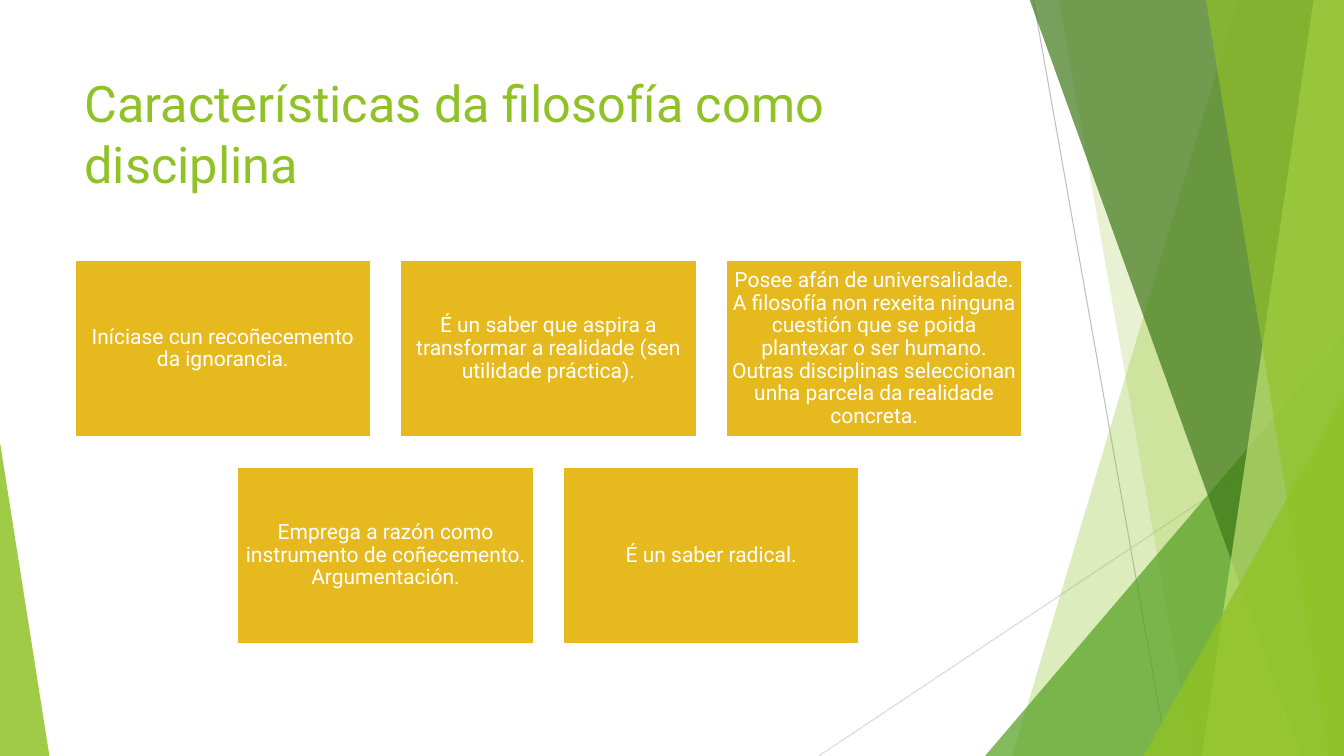
from dataclasses import dataclass

from lxml.etree import SubElement
from pptx import Presentation
from pptx.dml.color import RGBColor
from pptx.enum.shapes import MSO_CONNECTOR, MSO_SHAPE
from pptx.enum.text import MSO_ANCHOR, PP_ALIGN
from pptx.oxml.ns import qn
from pptx.shapes.autoshape import Shape
from pptx.slide import Slide
from pptx.util import Inches, Pt

WHITE = RGBColor(0xFF, 0xFF, 0xFF)
LIME = RGBColor(0x90, 0xC2, 0x26)
LEAF = RGBColor(0x54, 0xA0, 0x21)
FOREST = RGBColor(0x3F, 0x78, 0x19)
PALE_LIME = RGBColor(0xC0, 0xE4, 0x74)
GOLD = RGBColor(0xE6, 0xB9, 0x1E)
GRAY = RGBColor(0xBF, 0xBF, 0xBF)
LIGHT_GRAY = RGBColor(0xD9, 0xD9, 0xD9)

WIDTH, HEIGHT = 13.33, 7.5
FACET_TOP = -0.01
CARD_WIDTH, CARD_HEIGHT, GAP = 2.94, 1.76, 0.29
GRID_CENTER, GRID_TOP = 5.44, 2.58


@dataclass
class Ray:
    start: tuple[float, float]
    end: tuple[float, float]
    color: RGBColor


@dataclass
class Facet:
    """A full-height band whose slanted left edge runs from top_x to bottom_x."""
    top_x: float
    bottom_x: float
    color: RGBColor
    opacity: int


@dataclass
class Wedge:
    """A right triangle standing on the bottom edge of the page."""
    left: float
    width: float
    height: float
    apex: float
    color: RGBColor
    opacity: int


RAYS = [
    Ray((10.25, 0), (11.58, HEIGHT), GRAY),
    Ray((WIDTH, 4.03), (8.12, HEIGHT), LIGHT_GRAY),
]
DECORATION: list[Facet | Wedge] = [
    Facet(12.28, 10.04, LIME, 30),
    Facet(10.5, 11.83, LIME, 20),
    Wedge(9.77, 3.56, 4.17, 1, LEAF, 72),
    Facet(10.21, 12.91, FOREST, 70),
    Facet(13.03, 11.92, PALE_LIME, 70),
    Facet(11.96, 13.18, LIME, 65),
    Wedge(11.34, 1.99, 3.57, 1, LIME, 80),
    Wedge(0, 0.49, 3.11, 0, LIME, 85),
]
TITLE = "Características da filosofía como disciplina"
CARD_ROWS = [
    [
        "Iníciase cun recoñecemento da ignorancia.",
        "É un saber que aspira a transformar a realidade (sen utilidade práctica).",
        "Posee afán de universalidade. A filosofía non rexeita ninguna cuestión que "
        "se poida plantexar o ser humano. Outras disciplinas seleccionan unha "
        "parcela da realidade concreta.",
    ],
    [
        "Emprega a razón como instrumento de coñecemento. Argumentación.",
        "É un saber radical.",
    ],
]
CARD_FRAME = {
    "word_wrap": True,
    "vertical_anchor": MSO_ANCHOR.MIDDLE,
    "margin_left": Inches(0.06),
    "margin_right": Inches(0.06),
    "margin_top": Inches(0.06),
    "margin_bottom": Inches(0.06),
}
CARD_PARA = {"alignment": PP_ALIGN.CENTER, "line_spacing": 0.9}
CARD_FONT = {"name": "Roboto", "size": Pt(15)}
TITLE_FRAME = {"word_wrap": True, "vertical_anchor": MSO_ANCHOR.TOP}
TITLE_PARA = {"alignment": PP_ALIGN.LEFT}
TITLE_FONT = {"name": "Roboto", "size": Pt(36)}


def apply_format(target: object, values: dict) -> None:
    for name, value in values.items():
        setattr(target, name, value)


def write_text(box: Shape, text: str, frame_format: dict, para_format: dict,
               font_format: dict, color: RGBColor) -> None:
    apply_format(box.text_frame, frame_format)
    para = box.text_frame.paragraphs[0]
    apply_format(para, para_format)
    span = para.add_run()
    span.text = text
    apply_format(span.font, font_format)
    span.font.color.rgb = color


def paint(shape: Shape, color: RGBColor, opacity: int) -> None:
    shape.shadow.inherit = False
    shape.line.fill.background()
    shape.fill.solid()
    shape.fill.fore_color.rgb = color
    color_element = shape.fill._xPr.find(qn("a:solidFill"))[0]
    SubElement(color_element, qn("a:alpha")).set("val", str(opacity * 1000))


def draw_ray(page: Slide, ray: Ray) -> None:
    ends = [Inches(value) for value in (*ray.start, *ray.end)]
    line = page.shapes.add_connector(MSO_CONNECTOR.STRAIGHT, *ends)
    line.line.color.rgb = ray.color
    line.line.width = Pt(0.75)
    SubElement(line._element.spPr, qn("a:effectLst"))


def draw_facet(page: Slide, facet: Facet) -> None:
    corners = [(WIDTH, FACET_TOP), (WIDTH, HEIGHT), (facet.bottom_x, HEIGHT)]
    outline = page.shapes.build_freeform(Inches(facet.top_x), Inches(FACET_TOP))
    outline.add_line_segments([(Inches(x), Inches(y)) for x, y in corners], close=True)
    paint(outline.convert_to_shape(), facet.color, facet.opacity)


def draw_wedge(page: Slide, wedge: Wedge) -> None:
    triangle = page.shapes.add_shape(
        MSO_SHAPE.ISOSCELES_TRIANGLE, Inches(wedge.left), Inches(HEIGHT - wedge.height),
        Inches(wedge.width), Inches(wedge.height))
    triangle.adjustments[0] = wedge.apex
    paint(triangle, wedge.color, wedge.opacity)


def draw_card(page: Slide, left: float, top: float, text: str) -> None:
    card = page.shapes.add_shape(MSO_SHAPE.RECTANGLE, Inches(left), Inches(top),
                                 Inches(CARD_WIDTH), Inches(CARD_HEIGHT))
    card.shadow.inherit = False
    card.fill.solid()
    card.fill.fore_color.rgb = GOLD
    card.line.color.rgb = WHITE
    card.line.width = Pt(1.5)
    write_text(card, text, CARD_FRAME, CARD_PARA, CARD_FONT, WHITE)


def main() -> None:
    deck = Presentation()
    deck.slide_width, deck.slide_height = Inches(WIDTH), Inches(HEIGHT)
    page = deck.slides.add_slide(deck.slide_layouts[6])

    # Background decoration
    for ray in RAYS:
        draw_ray(page, ray)
    for part in DECORATION:
        if isinstance(part, Facet):
            draw_facet(page, part)
        else:
            draw_wedge(page, part)

    # Title
    title = page.shapes.add_textbox(Inches(0.74), Inches(0.67), Inches(9.4), Inches(1.44))
    write_text(title, TITLE, TITLE_FRAME, TITLE_PARA, TITLE_FONT, LIME)

    # Cards, each row centred on the grid
    for row, texts in enumerate(CARD_ROWS):
        row_width = len(texts) * (CARD_WIDTH + GAP) - GAP
        row_left = GRID_CENTER - row_width / 2
        top = GRID_TOP + row * (CARD_HEIGHT + GAP)
        for column, text in enumerate(texts):
            draw_card(page, row_left + column * (CARD_WIDTH + GAP), top, text)

    deck.save("out.pptx")


if __name__ == "__main__":
    main()
